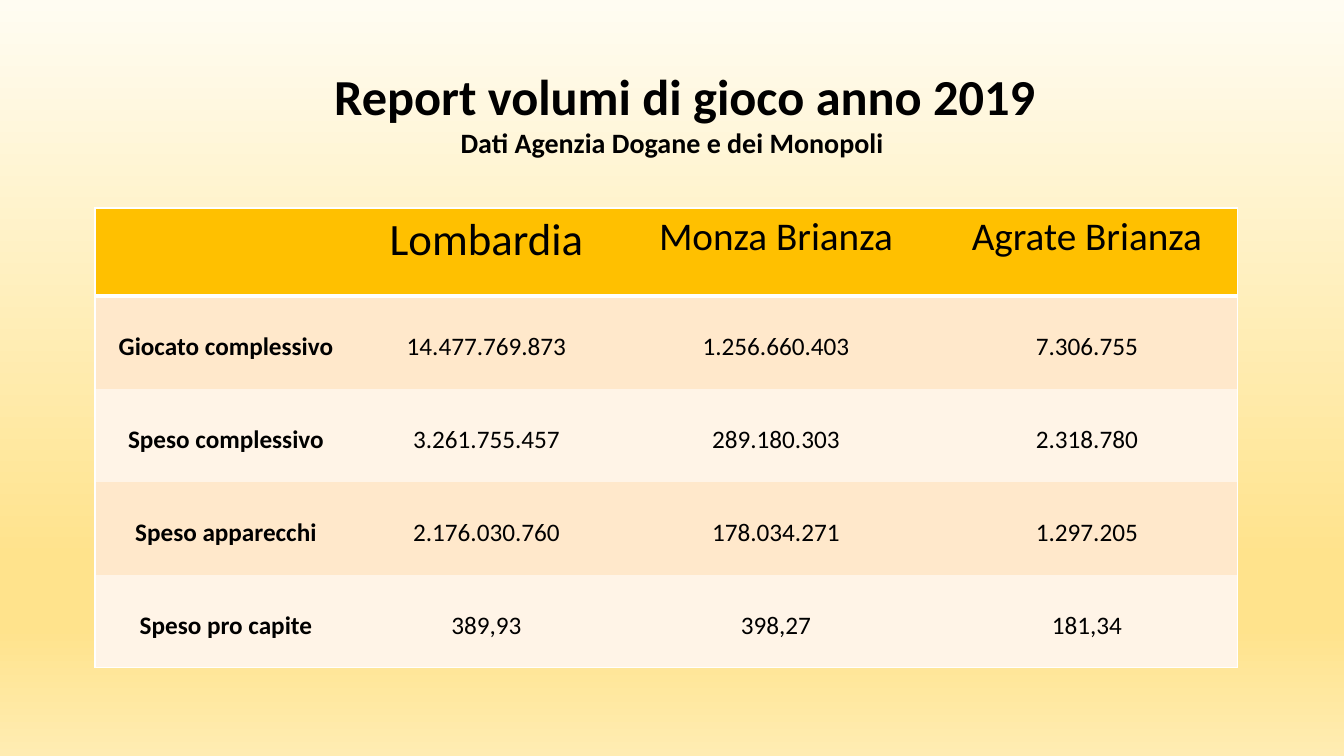
from dataclasses import dataclass

from lxml import etree
from pptx import Presentation
from pptx.dml.color import RGBColor
from pptx.enum.text import MSO_ANCHOR, PP_ALIGN
from pptx.oxml.ns import qn
from pptx.util import Emu, Pt

CENTER = PP_ALIGN.CENTER
MIDDLE = MSO_ANCHOR.MIDDLE

SLIDE_WIDTH, SLIDE_HEIGHT = 1344, 756
EMU_PER_PX = 12192000 / SLIDE_WIDTH
NO_TABLE_STYLE = "{2D5ABB26-0587-4C30-8999-92F81FD0307C}"


@dataclass(frozen=True)
class Theme:
    font: str = "Calibri"
    text: str = "000000"
    border: str = "FFFFFF"
    header: str = "FFC000"
    bands: tuple = ("FFE8CB", "FFF4E7")
    background: tuple = ((0, "FFFCF2"), (74, "FFE38C"), (83, "FFE38C"), (100, "FFECB2"))
    title_size: int = 36
    subtitle_size: int = 20
    header_sizes: tuple = (18, 32, 28, 28)
    body_size: int = 18


THEME = Theme()

TITLE = "Report volumi di gioco anno 2019"
SUBTITLE = "Dati Agenzia Dogane e dei Monopoli"
ROWS = [
    ("", "Lombardia", "Monza Brianza", "Agrate Brianza"),
    ("Giocato complessivo", "14.477.769.873", "1.256.660.403", "7.306.755"),
    ("Speso complessivo", "3.261.755.457", "289.180.303", "2.318.780"),
    ("Speso apparecchi", "2.176.030.760", "178.034.271", "1.297.205"),
    ("Speso pro capite", "389,93", "398,27", "181,34"),
]
COLUMN_WIDTHS = (262, 259, 320, 302)
HEADER_HEIGHT, BODY_HEIGHT = 88, 93


def px(length):
    return Emu(round(length * EMU_PER_PX))


def write(paragraph, text, size, bold=False, line_spacing=1.0):
    paragraph.text = text
    paragraph.alignment = CENTER
    paragraph.line_spacing = line_spacing
    paragraph.font.size = Pt(size)
    for run in paragraph.runs:
        run.font.name = THEME.font
        run.font.size = Pt(size)
        run.font.bold = bold
        run.font.color.rgb = RGBColor.from_string(THEME.text)


def add_border(cell, side, width):
    line = etree.SubElement(cell._tc.get_or_add_tcPr(), qn(f"a:ln{side}"), w=str(Pt(width)))
    fill = etree.SubElement(line, qn("a:solidFill"))
    etree.SubElement(fill, qn("a:srgbClr"), val=THEME.border)


def paint_background(slide):
    fill = slide.background.fill
    fill.gradient()
    fill.gradient_angle = 270
    stops = slide._element.find(".//" + qn("a:gsLst"))
    for stop in list(stops):
        stops.remove(stop)
    for position, color in THEME.background:
        stop = etree.SubElement(stops, qn("a:gs"), pos=str(position * 1000))
        etree.SubElement(stop, qn("a:srgbClr"), val=color)


def add_heading(slide, left, top, width, height):
    frame = slide.shapes.add_textbox(px(left), px(top), px(width), px(height)).text_frame
    frame.word_wrap = True
    frame.vertical_anchor = MIDDLE
    title = frame.paragraphs[0]
    write(title, TITLE, THEME.title_size, bold=True, line_spacing=0.9)
    title.space_after = Pt(2)
    # The title sits slightly right of the subtitle
    title._p.get_or_add_pPr().set("marL", str(px(26)))
    write(frame.add_paragraph(), SUBTITLE, THEME.subtitle_size, bold=True, line_spacing=0.9)


def add_volume_table(slide, left, top):
    last_row, last_column = len(ROWS) - 1, len(COLUMN_WIDTHS) - 1
    height = HEADER_HEIGHT + last_row * BODY_HEIGHT
    table = slide.shapes.add_table(len(ROWS), len(COLUMN_WIDTHS), px(left), px(top),
                                   px(sum(COLUMN_WIDTHS)), px(height)).table
    table._tbl.tblPr.find(qn("a:tableStyleId")).text = NO_TABLE_STYLE
    table.horz_banding = False
    for column, width in zip(table.columns, COLUMN_WIDTHS):
        column.width = px(width)

    for r, values in enumerate(ROWS):
        is_header = r == 0
        table.rows[r].height = px(HEADER_HEIGHT if is_header else BODY_HEIGHT)
        for c, value in enumerate(values):
            cell = table.cell(r, c)
            # White outline, with a thicker rule under the header
            if c == 0:
                add_border(cell, "L", 1)
            if c == last_column:
                add_border(cell, "R", 1)
            if is_header:
                add_border(cell, "T", 1)
            if is_header or r == last_row:
                add_border(cell, "B", 3 if is_header else 1)
            # Fill and text
            color = THEME.header if is_header else THEME.bands[(r - 1) % 2]
            cell.fill.solid()
            cell.fill.fore_color.rgb = RGBColor.from_string(color)
            write(cell.text_frame.paragraphs[0], value,
                  THEME.header_sizes[c] if is_header else THEME.body_size,
                  bold=not is_header and c == 0,
                  line_spacing=1.0 if is_header else 2.0)


def main():
    presentation = Presentation()
    presentation.slide_width = px(SLIDE_WIDTH)
    presentation.slide_height = px(SLIDE_HEIGHT)
    slide = presentation.slides.add_slide(presentation.slide_layouts[6])
    paint_background(slide)
    add_heading(slide, 106, 46, 1132, 139)
    add_volume_table(slide, 95, 208)
    presentation.save("out.pptx")


if __name__ == "__main__":
    main()
